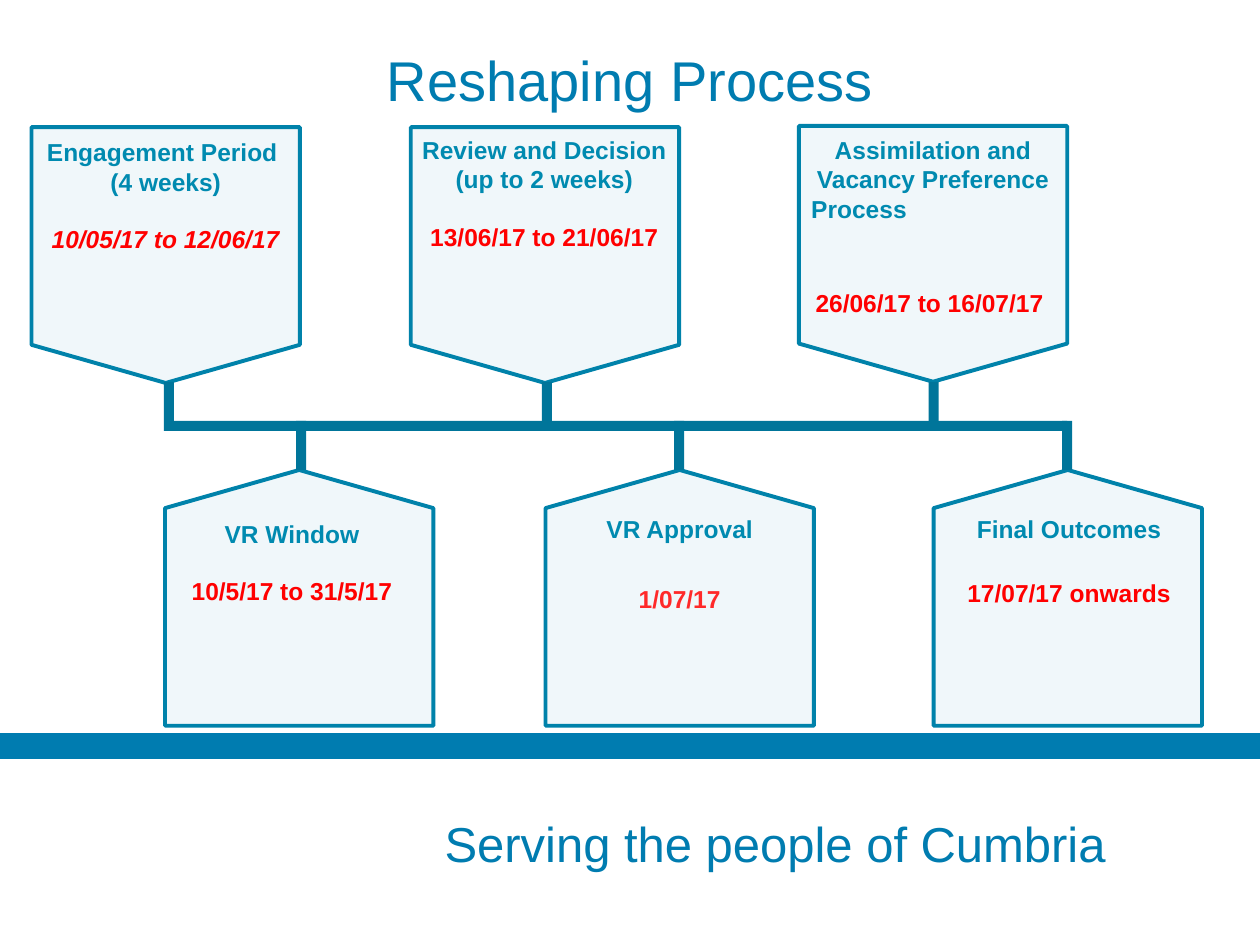
from lxml import etree
from pptx import Presentation
from pptx.dml.color import RGBColor
from pptx.enum.shapes import MSO_CONNECTOR, MSO_SHAPE
from pptx.enum.text import MSO_ANCHOR, PP_ALIGN
from pptx.oxml.ns import qn
from pptx.util import Inches, Pt

RECT, PLATE = MSO_SHAPE.RECTANGLE, MSO_SHAPE.PENTAGON
LEFT, CENTER = PP_ALIGN.LEFT, PP_ALIGN.CENTER
TOP, MIDDLE = MSO_ANCHOR.TOP, MSO_ANCHOR.MIDDLE
BLUE = RGBColor(0x00, 0x7C, 0xB0)
EDGE = RGBColor(0x00, 0x82, 0xAA)
HEAD = RGBColor(0x00, 0x8A, 0xB0)
DARK = RGBColor(0x00, 0x75, 0x9A)
RED = RGBColor(0xFF, 0x00, 0x00)
PALE_RED = RGBColor(0xFF, 0x29, 0x29)

TITLE = "Reshaping Process"
MOTTO = "Serving the people of Cumbria"
UPPER = [
    {"plate": (0.3, 0.96), "stub": 1.34, "box": (0.27, 1.04, 2.09, 1.04),
     "head": [("Engagement Period ", CENTER), ("(4 weeks)", CENTER)],
     "date": "10/05/17 to 12/06/17", "gap": 16, "color": RED, "italic": True},
    {"plate": (3.31, 0.96), "stub": 4.34, "box": (3.19, 1.02, 2.26, 1.28),
     "head": [("Review and Decision", CENTER), ("(up to 2 weeks)", CENTER)],
     "date": "13/06/17 to 21/06/17", "gap": 16, "color": RED},
    {"plate": (6.39, 0.95), "stub": 7.41, "box": (6.34, 1.02, 2.13, 1.33),
     "head": [("Assimilation and Vacancy Preference", CENTER), ("Process", LEFT)],
     "date": "26/06/17 to 16/07/17 ", "gap": 37, "color": RED},
]
LOWER = [
    {"plate": (1.36, 3.68), "stub": 2.39, "box": (1.28, 4.07, 2.13, 0.81),
     "head": [("VR Window ", CENTER)],
     "date": "10/5/17 to 31/5/17 ", "gap": 16, "color": RED},
    {"plate": (4.38, 3.68), "stub": 5.39, "box": (4.33, 4.03, 2.13, 0.9),
     "head": [("VR Approval", CENTER)],
     "date": "1/07/17", "gap": 23, "color": PALE_RED},
    {"plate": (7.46, 3.68), "stub": 8.47, "box": (7.42, 4.03, 2.13, 0.85),
     "head": [("Final Outcomes", CENTER)],
     "date": "17/07/17 onwards", "gap": 20, "color": RED},
]
ROWS = [(UPPER, 90, 3.03), (LOWER, 270, 3.34)]
PLATE_W, PLATE_H = 2.03, 2.13
BAR, STUB_H = 0.08, 0.39


def add_box(slide, area, anchor=TOP):
    frame = slide.shapes.add_textbox(*map(Inches, area)).text_frame
    frame.word_wrap = True
    frame.vertical_anchor = anchor
    return frame


def style(para, size, color, align, bold=False, italic=False):
    para.alignment = align
    for run in para.runs:
        font = run.font
        font.name, font.size = "Arial", Pt(size)
        font.bold, font.italic = bold, italic
        font.color.rgb = color


def add_label(slide, area, text, size, align, anchor=TOP):
    frame = add_box(slide, area, anchor)
    frame.text = text
    style(frame.paragraphs[0], size, BLUE, align)


def add_bar(slide, *area):
    bar = slide.shapes.add_shape(RECT, *map(Inches, area))
    bar.shadow.inherit = False
    bar.fill.solid()
    bar.fill.fore_color.rgb = DARK
    bar.line.fill.background()


def add_plate(slide, x, y, turn):
    plate = slide.shapes.add_shape(PLATE, *map(Inches, (x, y, PLATE_W, PLATE_H)))
    plate.rotation = turn
    plate.adjustments[0] = 0.149
    plate.shadow.inherit = False
    plate.fill.solid()
    plate.fill.fore_color.rgb = EDGE
    tint = plate.fill._xPr.find(qn("a:solidFill"))[0]
    etree.SubElement(tint, qn("a:alpha")).set("val", "6000")
    plate.line.color.rgb = EDGE
    plate.line.width = Pt(2.25)


def add_step(slide, step, turn):
    add_plate(slide, *step["plate"], turn)
    frame = add_box(slide, step["box"])
    frame.text = "\n".join([text for text, _ in step["head"]] + [step["date"]])
    *heads, date = frame.paragraphs
    for para, (_, align) in zip(heads, step["head"]):
        style(para, 14, HEAD, align, True)
    style(date, 14, step["color"], CENTER, True, step.get("italic", False))
    date.space_before = Pt(step["gap"])


def main():
    prs = Presentation()
    prs.slide_width, prs.slide_height = Inches(10), Inches(7.5)
    slide = prs.slides.add_slide(prs.slide_layouts[6])

    band = slide.shapes.add_connector(
        MSO_CONNECTOR.STRAIGHT, Inches(10), Inches(5.92), 0, Inches(5.92))
    band.line.color.rgb = BLUE
    band.line.width = Pt(15)
    etree.SubElement(band._element.spPr, qn("a:effectLst"))

    add_label(slide, (3.43, 6.41, 5.91, 0.57), MOTTO, 28, LEFT)
    add_label(slide, (0, 0, 10, 1.25), TITLE, 32, CENTER, MIDDLE)
    add_bar(slide, 1.32, 3.34, 7.15, BAR)
    for steps, turn, top in ROWS:
        for step in steps:
            add_step(slide, step, turn)
            add_bar(slide, step["stub"] - BAR / 2, top, BAR, STUB_H)
    prs.save("out.pptx")


if __name__ == "__main__":
    main()
